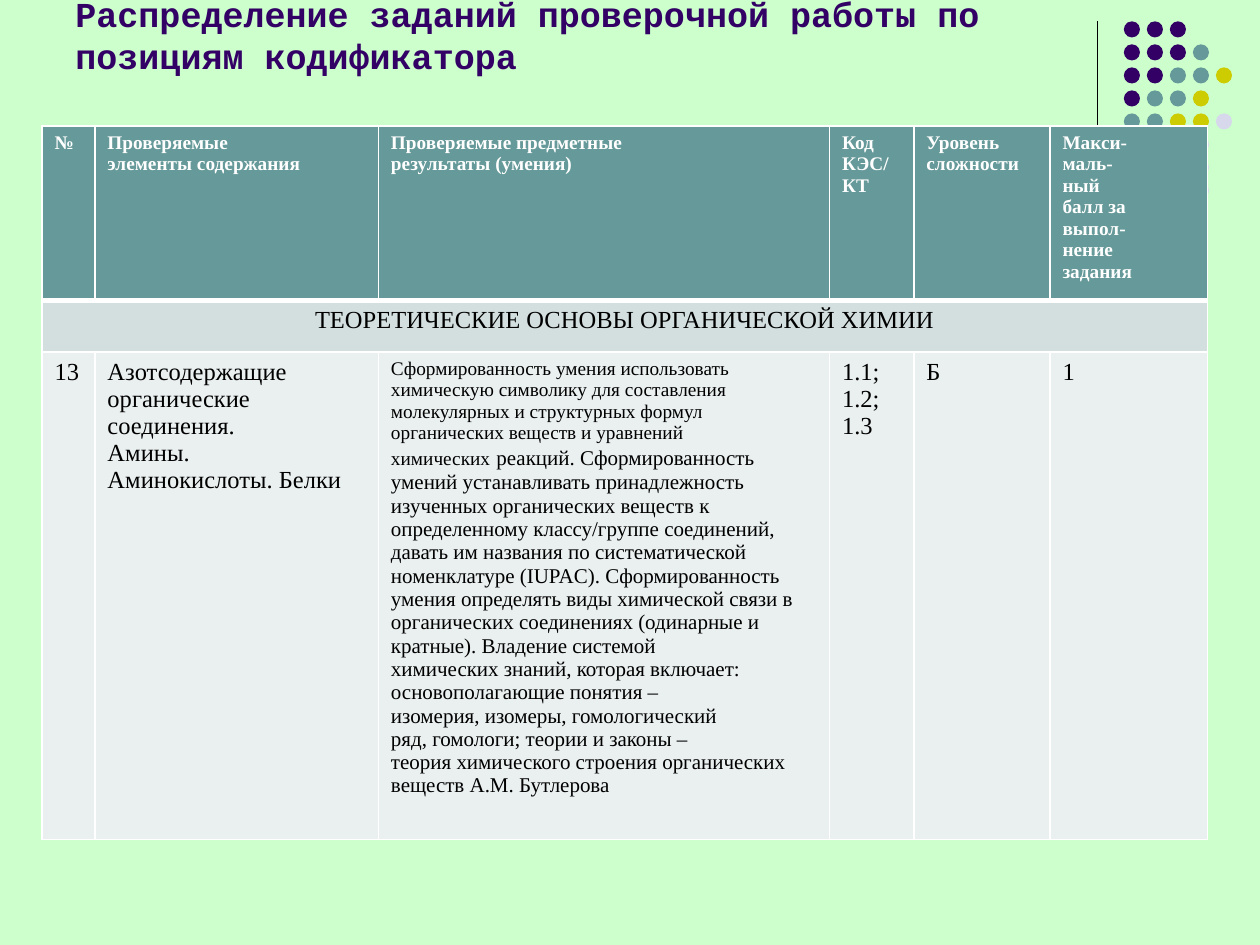
from lxml.etree import SubElement
from pptx import Presentation
from pptx.dml.color import RGBColor
from pptx.enum.shapes import MSO_CONNECTOR as Connector, MSO_SHAPE as Shape
from pptx.enum.text import MSO_ANCHOR as Anchor, PP_ALIGN as Align
from pptx.oxml.ns import qn
from pptx.util import Pt

COLORS = {
    "page": "CCFFCC", "purple": "330066", "teal": "669999", "olive": "CCCC00",
    "lilac": "D8D8EC", "black": "000000", "white": "FFFFFF",
    "section": "D3DEDE", "body": "EAEFEF",
}
SERIF = "Times New Roman"
MONO = "Courier New"

# One letter per dot, a point for a gap
DOT_ROWS = ["PPP", "PPPT", "PPTTO", "PTTO", "TTOOL", "TOOL", "OOLL", ".L.L"]
DOT_COLORS = {"P": "purple", "T": "teal", "O": "olive", "L": "lilac"}

COLUMN_WIDTHS = [30.24, 162, 257.76, 48.24, 77.76, 90]
ROW_HEIGHTS = [92, 29.5, 258.5]

# A cell is a list of paragraphs; "\n" is a line break inside a paragraph
HEADINGS = [
    ["№"],
    ["Проверяемые", "элементы содержания"],
    ["Проверяемые предметные", "результаты (умения)"],
    ["Код", "КЭС/", "КТ"],
    ["Уровень", "сложности"],
    ["Макси-", "маль-", "ный", "балл за", "выпол-", "нение", "задания"],
]
SECTION = ["ТЕОРЕТИЧЕСКИЕ ОСНОВЫ ОРГАНИЧЕСКОЙ ХИМИИ"]
SKILLS = [
    # A paragraph of several sizes is a list of (text, size)
    [("Сформированность умения использовать\n"
      "химическую символику для составления\n"
      "молекулярных и структурных формул\n"
      "органических веществ и уравнений\n"
      "химических", 11),
     (" ", 14),
     ("реакций. Сформированность\n"
      "умений устанавливать принадлежность\n"
      "изученных органических веществ к", 12)],
    "определенному классу/группе соединений,\n"
    "давать им названия по систематической\n"
    "номенклатуре (IUPAC). Сформированность\n"
    "умения определять виды химической связи в",
    "органических соединениях (одинарные и\nкратные). Владение системой",
    "химических знаний, которая включает:\nосновополагающие понятия –",
    "изомерия, изомеры, гомологический",
    "ряд, гомологи; теории и законы –",
    "теория химического строения органических\nвеществ A.M. Бутлерова",
]
TASK = [
    (["13"], 14),
    (["Азотсодержащие\nорганические\nсоединения.", "Амины.\nАминокислоты. Белки"], 14),
    (SKILLS, 12),
    (["1.1;", "1.2;", "1.3"], 14),
    (["Б"], 14),
    (["1"], 14),
]


def rgb(name):
    return RGBColor.from_string(COLORS[name])


def add_run(paragraph, text, size, color, font=SERIF, bold=False):
    for i, line in enumerate(text.split("\n")):
        if i:
            paragraph.add_line_break()
            SubElement(paragraph._p[-1], qn("a:rPr"), sz=str(size * 100))
        run = paragraph.add_run()
        run.text = line
        run.font.size, run.font.name, run.font.bold = Pt(size), font, bold
        run.font.color.rgb = rgb(color)


def add_rule(slide, x, top, height):
    rule = slide.shapes.add_connector(
        Connector.STRAIGHT, Pt(x), Pt(top), Pt(x), Pt(top + height))
    rule.line.color.rgb = rgb("black")
    rule.line.width = Pt(0.75)
    SubElement(rule._element.spPr, qn("a:effectLst"))


def add_dots(slide, left, top, pitch, size):
    dots = slide.shapes.add_group_shape()
    for row, letters in enumerate(DOT_ROWS):
        for column, letter in enumerate(letters):
            if letter == ".":
                continue
            dot = dots.shapes.add_shape(
                Shape.OVAL, Pt(left + column * pitch), Pt(top + row * pitch),
                Pt(size), Pt(size))
            dot.shadow.inherit = False
            dot.fill.solid()
            dot.fill.fore_color.rgb = rgb(DOT_COLORS[letter])
            dot.line.fill.background()


def add_title(slide, left, top, width, height):
    frame = slide.shapes.add_textbox(Pt(left), Pt(top), Pt(width), Pt(height)).text_frame
    frame.word_wrap = True
    frame.vertical_anchor = Anchor.BOTTOM
    add_run(frame.paragraphs[0],
            "Распределение заданий проверочной работы по позициям кодификатора",
            20, "purple", MONO, True)


def set_borders(cell, bottom):
    props = cell._tc.get_or_add_tcPr()
    for side, width in (("L", 1), ("R", 1), ("T", 1), ("B", bottom)):
        border = SubElement(props, qn(f"a:ln{side}"), w=str(Pt(width)))
        fill = SubElement(border, qn("a:solidFill"))
        SubElement(fill, qn("a:srgbClr"), val=COLORS["white"])


def fill_cell(cell, paragraphs, size, fill, color="black", bold=False, align=Align.LEFT):
    cell.fill.solid()
    cell.fill.fore_color.rgb = rgb(fill)
    frame = cell.text_frame
    for i, content in enumerate(paragraphs):
        paragraph = frame.add_paragraph() if i else frame.paragraphs[0]
        paragraph.alignment = align
        runs = [(content, size)] if isinstance(content, str) else content
        for text, run_size in runs:
            add_run(paragraph, text, run_size, color, bold=bold)


def add_codifier_table(slide, left, top):
    table = slide.shapes.add_table(
        len(ROW_HEIGHTS), len(COLUMN_WIDTHS), Pt(left), Pt(top),
        Pt(sum(COLUMN_WIDTHS)), Pt(sum(ROW_HEIGHTS))).table
    for column, width in zip(table.columns, COLUMN_WIDTHS):
        column.width = Pt(width)
    for i, height in enumerate(ROW_HEIGHTS):
        table.rows[i].height = Pt(height)
        for cell in table.rows[i].cells:
            set_borders(cell, 1 if i else 3)

    # Headings, section band, task row
    for column, heading in enumerate(HEADINGS):
        fill_cell(table.cell(0, column), heading, 11, "teal", "white", True)
    band = table.cell(1, 0)
    band.merge(table.cell(1, len(COLUMN_WIDTHS) - 1))
    fill_cell(band, SECTION, 14, "section", align=Align.CENTER)
    for column, (paragraphs, size) in enumerate(TASK):
        fill_cell(table.cell(2, column), paragraphs, size, "body")


def main():
    prs = Presentation()
    prs.slide_width, prs.slide_height = Pt(720), Pt(540)
    slide = prs.slides.add_slide(prs.slide_layouts[6])
    slide.background.fill.solid()
    slide.background.fill.fore_color.rgb = rgb("page")
    add_rule(slide, 627, 12, 120)
    add_dots(slide, 642.2, 12.2, 13.15, 9.2)
    add_title(slide, 36, 9.5, 594, 38)
    add_codifier_table(slide, 24, 72)
    prs.save("out.pptx")


if __name__ == "__main__":
    main()
